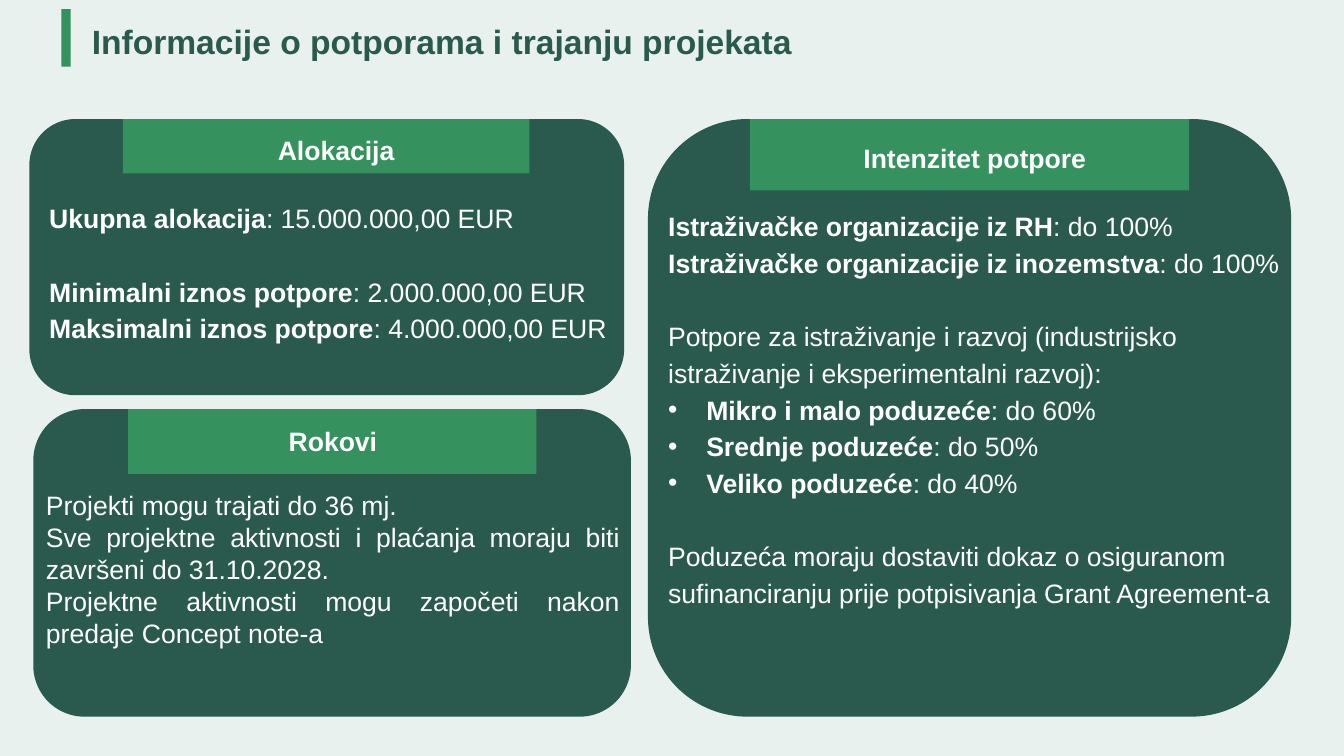
from lxml import etree
from pptx import Presentation
from pptx.dml.color import RGBColor
from pptx.enum.shapes import MSO_SHAPE
from pptx.enum.text import MSO_ANCHOR, PP_ALIGN
from pptx.oxml.ns import qn
from pptx.util import Cm, Pt

ROUNDED, RECT = MSO_SHAPE.ROUNDED_RECTANGLE, MSO_SHAPE.RECTANGLE
LEFT, CENTER, JUSTIFY = PP_ALIGN.LEFT, PP_ALIGN.CENTER, PP_ALIGN.JUSTIFY
MIDDLE = MSO_ANCHOR.MIDDLE

PALE, DARK, GREEN, WHITE = "E9F1EF", "295A4D", "35915D", "FFFFFF"
FONT = "Arial"
TITLE_SIZE, BODY_SIZE = 24, 19
BLANK_LINE = 22.7
BULLET_INDENT = 0.96

TITLE = "Informacije o potporama i trajanju projekata"
TITLE_BOX = (2.06, 0.51, 27.2, 1.19)
ACCENT_BOX = (1.55, 0.23, 0.23, 1.45)

# Each line: bold part, plain part, starts a new block, bulleted
CARDS = [
    {
        "heading": "Alokacija",
        "card": (0.74, 3.0, 14.99, 6.96),
        "band": (3.1, 3.0, 10.24, 1.37),
        "text": (0.99, 3.25, 14.96, 8.92),
        "align": LEFT,
        "spacing": 1.15,
        "lines": [
            ("Ukupna alokacija", ": 15.000.000,00 EUR", True, False),
            ("Minimalni iznos potpore", ": 2.000.000,00 EUR", True, False),
            ("Maksimalni iznos potpore", ": 4.000.000,00 EUR", False, False),
        ],
    },
    {
        "heading": "Intenzitet potpore",
        "card": (16.33, 3.0, 16.21, 15.06),
        "band": (18.9, 3.0, 11.07, 1.8),
        "text": (16.59, 3.45, 15.95, 15.6),
        "align": LEFT,
        "spacing": 1.15,
        "lines": [
            ("Istraživačke organizacije iz RH", ": do 100%", True, False),
            ("Istraživačke organizacije iz inozemstva", ": do 100%", False, False),
            ("", "Potpore za istraživanje i razvoj (industrijsko istraživanje "
                 "i eksperimentalni razvoj):", True, False),
            ("Mikro i malo poduzeće", ": do 60%", False, True),
            ("Srednje poduzeće", ": do 50%", False, True),
            ("Veliko poduzeće", ": do 40%", False, True),
            ("", "Poduzeća moraju dostaviti dokaz o osiguranom sufinanciranju "
                 "prije potpisivanja Grant Agreement-a", True, False),
        ],
    },
    {
        "heading": "Rokovi",
        "card": (0.84, 10.31, 15.06, 7.75),
        "band": (3.23, 10.31, 10.29, 1.63),
        "text": (0.91, 10.59, 14.96, 5.94),
        "align": JUSTIFY,
        "spacing": 1.0,
        "lines": [
            ("", "Projekti mogu trajati do 36 mj.", True, False),
            ("", "Sve projektne aktivnosti i plaćanja moraju biti završeni "
                 "do 31.10.2028.", False, False),
            ("", "Projektne aktivnosti mogu započeti nakon predaje "
                 "Concept note-a", False, False),
        ],
    },
]


def color(value):
    return RGBColor.from_string(value)


def lengths(box):
    return [Cm(value) for value in box]


def add_block(shapes, kind, box, fill):
    block = shapes.add_shape(kind, *lengths(box))
    block.shadow.inherit = False
    block.fill.solid()
    block.fill.fore_color.rgb = color(fill)
    block.line.fill.background()


def format_run(run, size, ink, bold):
    run.font.name = FONT
    run.font.size = Pt(size)
    run.font.bold = bold
    run.font.color.rgb = color(ink)


def add_bullet(paragraph):
    properties = paragraph._p.get_or_add_pPr()
    properties.set("marL", str(Cm(BULLET_INDENT)))
    properties.set("indent", str(-Cm(BULLET_INDENT)))
    etree.SubElement(properties, qn("a:buFont"), typeface=FONT)
    etree.SubElement(properties, qn("a:buChar"), char="•")


def add_line(frame, card, bold_part, plain_part, new_block, bulleted):
    paragraph = frame.add_paragraph()
    paragraph.alignment = card["align"]
    paragraph.line_spacing = card["spacing"]
    if new_block:
        first = len(frame.paragraphs) == 2
        paragraph.space_before = Pt(BLANK_LINE * (1 if first else card["spacing"]))
    if bulleted:
        add_bullet(paragraph)
    for words, bold in ((bold_part, True), (plain_part, False)):
        if words:
            run = paragraph.add_run()
            run.text = words
            format_run(run, BODY_SIZE, WHITE, bold)


def add_card(slide, card):
    panel = slide.shapes.add_group_shape().shapes
    add_block(panel, ROUNDED, card["card"], DARK)
    add_block(panel, RECT, card["band"], GREEN)
    frame = slide.shapes.add_textbox(*lengths(card["text"])).text_frame
    frame.word_wrap = True
    heading = frame.paragraphs[0]
    heading.text = card["heading"]
    heading.alignment = CENTER
    format_run(heading.runs[0], BODY_SIZE, WHITE, True)
    for line in card["lines"]:
        add_line(frame, card, *line)


def main():
    deck = Presentation()
    deck.slide_width, deck.slide_height = Cm(33.87), Cm(19.05)
    slide = deck.slides.add_slide(deck.slide_layouts[5])
    slide.background.fill.solid()
    slide.background.fill.fore_color.rgb = color(PALE)

    title = slide.shapes.title
    title.left, title.top, title.width, title.height = lengths(TITLE_BOX)
    title.text_frame.text = TITLE
    title.text_frame.vertical_anchor = MIDDLE
    heading = title.text_frame.paragraphs[0]
    heading.alignment = LEFT
    heading.line_spacing = 0.9
    format_run(heading.runs[0], TITLE_SIZE, DARK, True)

    add_block(slide.shapes, RECT, ACCENT_BOX, GREEN)
    for card in CARDS:
        add_card(slide, card)
    deck.save("out.pptx")


if __name__ == "__main__":
    main()
